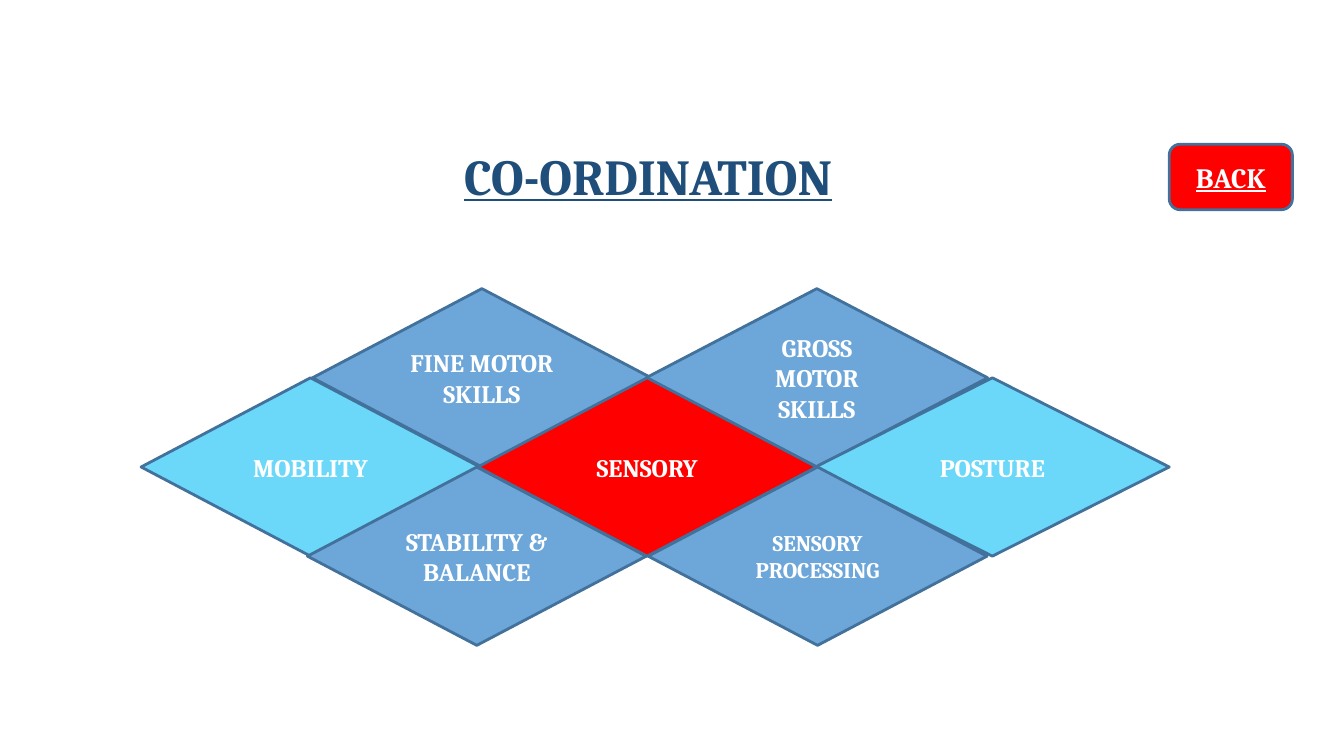
import pptx
import pptx.util
import pptx.dml.color
import pptx.enum.shapes
import pptx.enum.text
from dataclasses import dataclass

Pt = pptx.util.Pt
Shapes = pptx.enum.shapes.MSO_SHAPE


@dataclass(frozen=True)
class Theme:
    """Colours, font and type sizes of the slide."""
    font: str = "Cambria"
    navy: str = "1E4E79"
    outline: str = "42719B"
    blue: str = "6DA6D9"
    cyan: str = "6BD7F9"
    red: str = "FF0000"
    white: str = "FFFFFF"
    title: int = 36
    button: int = 20
    label: int = 18
    small: int = 16


THEME = Theme()


def colour(code):
    """Turn a hex code into a colour value."""
    return pptx.dml.color.RGBColor.from_string(code)


def write(shape, text, size, ink, underline=False):
    """Put one centred bold line of text in a shape."""
    frame = shape.text_frame
    frame.word_wrap = True
    frame.vertical_anchor = pptx.enum.text.MSO_ANCHOR.MIDDLE
    frame.text = text
    para = frame.paragraphs[0]
    para.alignment = pptx.enum.text.PP_ALIGN.CENTER
    font = para.runs[0].font
    font.name, font.size, font.bold = THEME.font, Pt(size), True
    font.underline = underline
    font.color.rgb = colour(ink)
    return para


def add_tile(page, kind, box, fill):
    """Draw a filled, outlined shape in the given box."""
    tile = page.shapes.add_shape(kind, *map(Pt, box))
    tile.shadow.inherit = False
    tile.fill.solid()
    tile.fill.fore_color.rgb = colour(fill)
    tile.line.color.rgb = colour(THEME.outline)
    tile.line.width = Pt(2)
    return tile


def add_title(page, box):
    """Place the slide title."""
    title = page.shapes.add_textbox(*map(Pt, box))
    para = write(title, "CO-ORDINATION", THEME.title, THEME.navy, True)
    para.line_spacing = 0.9


def add_back_button(page, box):
    """Place the back button."""
    button = add_tile(page, Shapes.ROUNDED_RECTANGLE, box, THEME.red)
    write(button, "BACK", THEME.button, THEME.white, True)


def add_diamonds(page, box):
    """Lay interlocking diamonds in rows half a diamond apart."""
    left, top, _, height = box
    half = height / 4
    diamonds = [
        ("FINE MOTOR SKILLS", 122.4, 0, 242, THEME.blue, THEME.label),
        ("GROSS MOTOR SKILLS", 360.7, 0, 244, THEME.blue, THEME.label),
        ("MOBILITY", 0, 1, 242, THEME.cyan, THEME.label),
        ("STABILITY & BALANCE", 118.8, 2, 242, THEME.blue, THEME.label),
        ("SENSORY", 240.5, 1, 242, THEME.red, THEME.label),
        ("POSTURE", 481.7, 1, 252.7, THEME.cyan, THEME.label),
        ("SENSORY PROCESSING", 362.2, 2, 242, THEME.blue, THEME.small),
    ]
    for text, offset, row, width, fill, size in diamonds:
        place = (left + offset, top + row * half, width, 2 * half)
        tile = add_tile(page, Shapes.FLOWCHART_DECISION, place, fill)
        write(tile, text, size, THEME.white)


def main():
    """Build the slide and save it."""
    deck = pptx.Presentation()
    deck.slide_width, deck.slide_height = Pt(960), Pt(540)
    page = deck.slides.add_slide(deck.slide_layouts[6])
    add_title(page, (24.5, 102.2, 877, 51.1))
    add_diamonds(page, (100.8, 206.2, 734.4, 254.8))
    add_back_button(page, (835.2, 103, 88, 46.8))
    deck.save("out.pptx")


if __name__ == "__main__":
    main()
